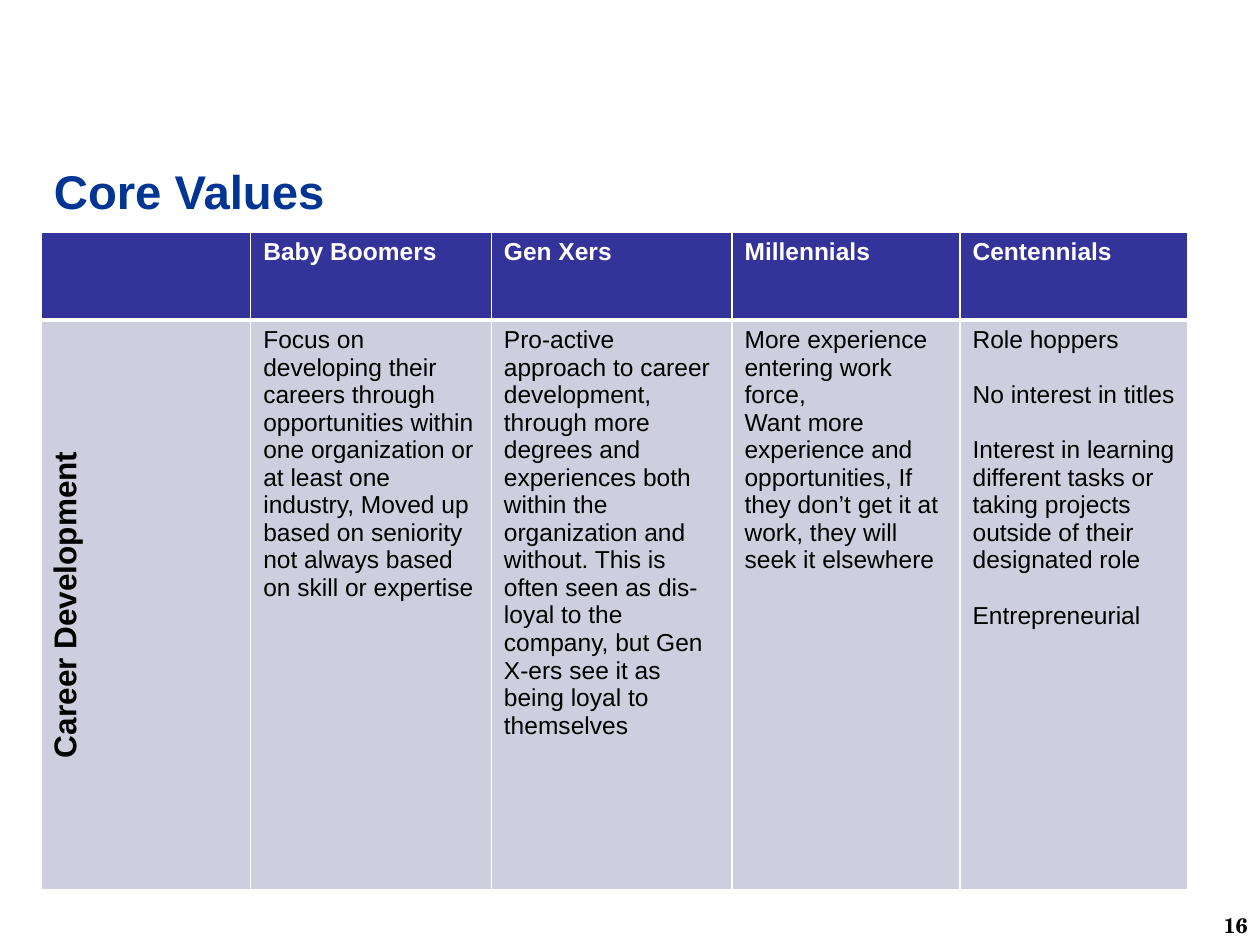
from lxml.etree import SubElement
from pptx import Presentation
from pptx.dml.color import RGBColor
from pptx.enum.text import MSO_ANCHOR, PP_ALIGN
from pptx.oxml.ns import qn
from pptx.util import Inches, Pt

THEME = {
    "font": "Arial", "number_font": "TeX Gyre Schola",
    "title": "003594", "header": "333399", "body": "CECEDE",
    "light": "FFFFFF", "dark": "000000",
    "title_size": 27, "side_size": 18, "text_size": 14, "number_size": 12,
    "gap": 15.75,
}

TITLE = "Core Values"
NUMBER = "16"
SIDE_LABEL = "Career Development"
GENERATIONS = [
    ("Baby Boomers", 1.91, 0, [
        "Focus on developing their careers through opportunities within one "
        "organization or at least one industry, Moved up based on seniority "
        "not always based on skill or expertise"]),
    ("Gen Xers", 1.91, 0, [
        "Pro-active approach to career development, through more degrees and "
        "experiences both within the organization and without. This is often "
        "seen as dis-loyal to the company, but Gen X-ers see it as being "
        "loyal to themselves"]),
    ("Millennials", 1.81, 0, [
        "More experience entering work force,",
        "Want more experience and opportunities, If they don’t get it at "
        "work, they will seek it elsewhere"]),
    ("Centennials", 1.81, THEME["gap"], [
        "Role hoppers",
        "No interest in titles",
        "Interest in learning different tasks or taking projects outside of "
        "their designated role",
        "Entrepreneurial"]),
]
SIDE_WIDTH = 1.66
ROW_HEIGHTS = [0.7, 4.52]


def write(tf, lines, size=THEME["text_size"], color=THEME["dark"], bold=False,
          font=THEME["font"], align=PP_ALIGN.LEFT, gap=0):
    for i, line in enumerate(lines):
        p = tf.paragraphs[0] if i == 0 else tf.add_paragraph()
        p.alignment = align
        p.space_before = Pt(gap if i else 0)
        r = p.add_run()
        r.text = line
        r.font.name = font
        r.font.size = Pt(size)
        r.font.bold = bold
        r.font.color.rgb = RGBColor.from_string(color)


def add_text(s, box, text, **fmt):
    tf = s.shapes.add_textbox(*map(Inches, box)).text_frame
    tf.word_wrap = True
    tf.vertical_anchor = MSO_ANCHOR.MIDDLE
    write(tf, [text], **fmt)


def style_cell(cell, fill, top, bottom):
    tcPr = cell._tc.get_or_add_tcPr()
    for side, width in zip("LRTB", (1, 1, top, bottom)):
        ln = SubElement(tcPr, qn(f"a:ln{side}"), w=str(Pt(width)))
        solid = SubElement(ln, qn("a:solidFill"))
        SubElement(solid, qn("a:srgbClr"), val=THEME["light"])
    cell.fill.solid()
    cell.fill.fore_color.rgb = RGBColor.from_string(fill)


def add_values_table(s):
    widths = [SIDE_WIDTH] + [g[1] for g in GENERATIONS]
    frame = s.shapes.add_table(
        len(ROW_HEIGHTS), len(widths), Inches(0.33), Inches(1.84),
        Inches(sum(widths)), Inches(sum(ROW_HEIGHTS)))
    table = frame.table
    for column, width in zip(table.columns, widths):
        column.width = Inches(width)
    for row, height in zip(table.rows, ROW_HEIGHTS):
        row.height = Inches(height)
    for c in range(len(widths)):
        style_cell(table.cell(0, c), THEME["header"], 1, 3)
        style_cell(table.cell(1, c), THEME["body"], 3, 1)

    side = table.cell(1, 0)
    side._tc.get_or_add_tcPr().set("vert", "vert270")
    write(side.text_frame, [SIDE_LABEL], size=THEME["side_size"], bold=True,
          align=PP_ALIGN.CENTER)
    for c, (name, _, gap, lines) in enumerate(GENERATIONS, 1):
        write(table.cell(0, c).text_frame, [name], color=THEME["light"], bold=True)
        write(table.cell(1, c).text_frame, lines, gap=gap)


def main():
    prs = Presentation()
    prs.slide_width, prs.slide_height = Inches(10), Inches(7.5)
    s = prs.slides.add_slide(prs.slide_layouts[6])
    add_text(s, (0.33, 1.18, 9, 0.66), TITLE, size=THEME["title_size"],
             color=THEME["title"], bold=True)
    add_values_table(s)
    add_text(s, (8.89, 7.24, 1.11, 0.21), NUMBER, size=THEME["number_size"],
             font=THEME["number_font"], bold=True, align=PP_ALIGN.RIGHT)
    prs.save("out.pptx")


if __name__ == "__main__":
    main()
